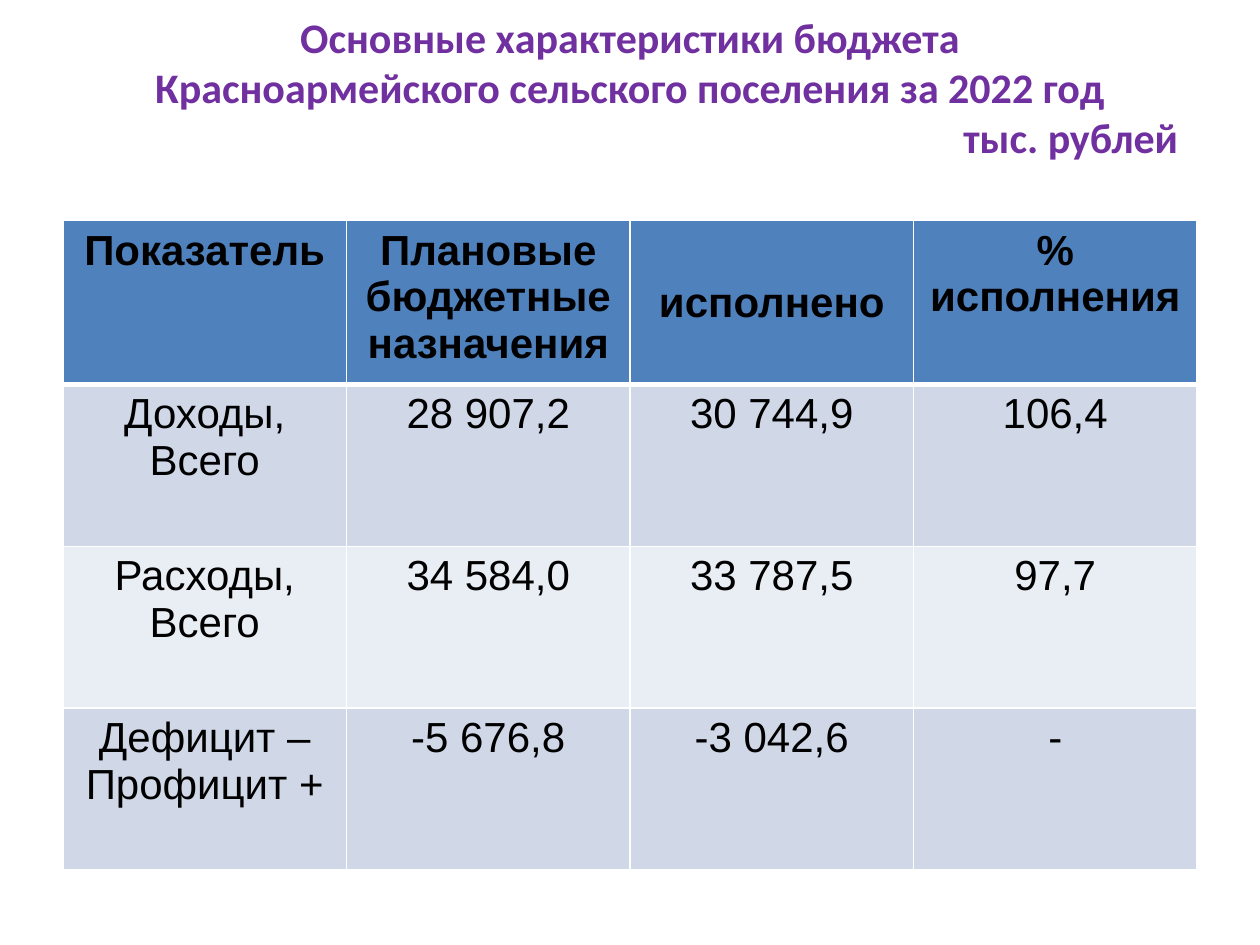
from lxml import etree
from pptx import Presentation
from pptx.dml.color import RGBColor
from pptx.enum.text import MSO_ANCHOR, PP_ALIGN
from pptx.oxml.ns import qn
from pptx.util import Cm, Pt

CENTER, RIGHT = PP_ALIGN.CENTER, PP_ALIGN.RIGHT
MIDDLE = MSO_ANCHOR.MIDDLE

PURPLE = RGBColor(0x70, 0x30, 0xA0)
BLACK = RGBColor(0x00, 0x00, 0x00)
WHITE = RGBColor(0xFF, 0xFF, 0xFF)
HEADER_BLUE = RGBColor(0x4F, 0x81, 0xBD)
DARK_BAND = RGBColor(0xD0, 0xD8, 0xE8)
LIGHT_BAND = RGBColor(0xE9, 0xED, 0xF4)

TITLE_LINES = [
    ("Основные характеристики бюджета", CENTER),
    ("Красноармейского сельского поселения за 2022 год", CENTER),
    ("тыс. рублей", RIGHT),
]
BUDGET_ROWS = [
    ["Показатель", "Плановые бюджетные назначения", "исполнено", "%\nисполнения"],
    ["Доходы,\nВсего", "28 907,2", "30 744,9", "106,4"],
    ["Расходы,\nВсего", "34 584,0", "33 787,5", "97,7"],
    ["Дефицит –\nПрофицит +", "-5 676,8", "-3 042,6", "-"],
]


def write_lines(frame, lines, font_name, color, bold):
    """Fill a text frame with one 24 pt paragraph per (text, alignment) pair."""
    for index, (text, alignment) in enumerate(lines):
        para = frame.paragraphs[0] if index == 0 else frame.add_paragraph()
        para.alignment = alignment
        span = para.add_run()
        span.text = text
        span.font.name = font_name
        span.font.size = Pt(24)
        span.font.bold = bold
        span.font.color.rgb = color


def add_border(cell, side, width):
    """Draw one white cell edge; side is L, R, T or B."""
    properties = cell._tc.get_or_add_tcPr()
    line = etree.SubElement(properties, qn(f"a:ln{side}"), w=str(width))
    fill = etree.SubElement(line, qn("a:solidFill"))
    etree.SubElement(fill, qn("a:srgbClr"), val=str(WHITE))


deck = Presentation()
deck.slide_width, deck.slide_height = Cm(25.4), Cm(19.05)
page = deck.slides.add_slide(deck.slide_layouts[6])

# Title; the bottom margin lifts the text towards the top of the page
title = page.shapes.add_textbox(Cm(1.27), Cm(0.76), Cm(22.86), Cm(3))
title_frame = title.text_frame
title_frame.word_wrap = True
title_frame.vertical_anchor = MIDDLE
title_frame.margin_left = title_frame.margin_right = Cm(0.38)
title_frame.margin_top, title_frame.margin_bottom = Cm(0), Cm(1.02)
write_lines(title_frame, TITLE_LINES, "Calibri", PURPLE, True)

# Budget table
table = page.shapes.add_table(
    len(BUDGET_ROWS), len(BUDGET_ROWS[0]), Cm(1.27), Cm(4.45), Cm(22.86), Cm(13.04)
).table
for row, texts in enumerate(BUDGET_ROWS):
    is_header = row == 0
    band = HEADER_BLUE if is_header else DARK_BAND if row % 2 else LIGHT_BAND
    for column, text in enumerate(texts):
        cell = table.cell(row, column)
        add_border(cell, "L", Pt(1))
        add_border(cell, "R", Pt(1))
        add_border(cell, "T", Pt(3 if row == 1 else 1))
        add_border(cell, "B", Pt(3 if is_header else 1))
        cell.fill.solid()
        cell.fill.fore_color.rgb = band
        lines = [(line, CENTER) for line in text.split("\n")]
        write_lines(cell.text_frame, lines, "Arial", BLACK, is_header)

# The third heading sits one line lower than its neighbours
table.cell(0, 2).margin_top = Cm(1.18)

deck.save("out.pptx")
